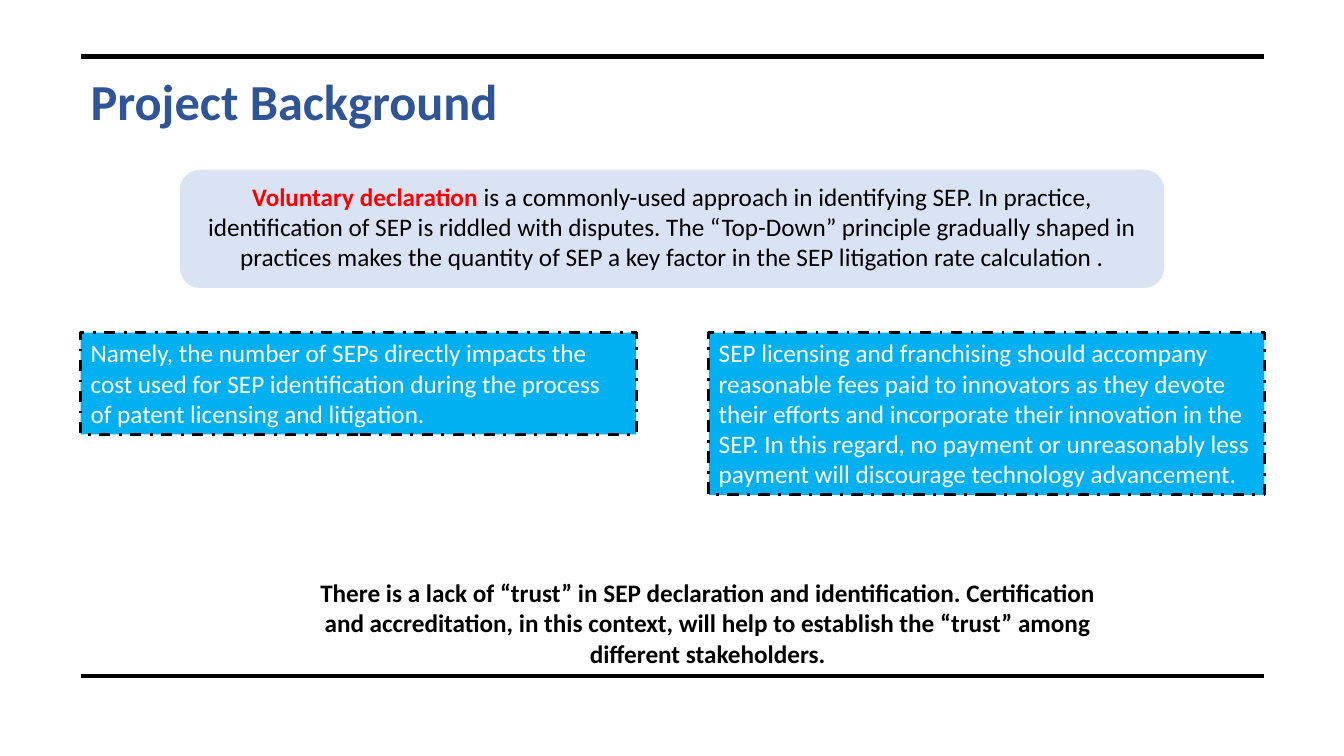
from pptx import Presentation
from pptx import util as u
from pptx.dml.color import RGBColor
from pptx.enum import dml, shapes, text
from pptx.oxml.ns import qn
from lxml import etree

LEFT, RIGHT = 0.8, 12.54
CARD_WIDTH, CARD_TOP = 5.51, 3.3


def color(value):
    return RGBColor.from_string(value)


class SlideBuilder:
    font = "Calibri"
    black, white, red = "000000", "FFFFFF", "FF0000"
    navy, pale, cyan = "2F5597", "DAE3F3", "00B0F0"

    def __init__(self, slide):
        self.slide = slide

    def rule(self, y):
        """Draw a heavy horizontal line across the content width."""
        line = self.slide.shapes.add_connector(
            shapes.MSO_CONNECTOR.STRAIGHT,
            u.Inches(LEFT), u.Inches(y), u.Inches(RIGHT), u.Inches(y))
        line.line.color.rgb = color(self.black)
        line.line.width = u.Pt(3)
        etree.SubElement(line._element.find(qn("p:spPr")), qn("a:effectLst"))

    def fill_text(self, box, spans, ink, size=18, bold=False, centred=False):
        """Fill a box with one paragraph; spans are (text, accent colour or None)."""
        frame = box.text_frame
        frame.word_wrap = True
        frame.vertical_anchor = text.MSO_ANCHOR.TOP
        para = frame.paragraphs[0]
        para.alignment = text.PP_ALIGN.CENTER if centred else text.PP_ALIGN.LEFT
        para.font.name = self.font
        para.font.size = u.Pt(size)
        para.font.bold = bold
        para.font.color.rgb = color(ink)
        for words, accent in spans:
            span = para.add_run()
            span.text = words
            if accent:
                span.font.bold = True
                span.font.color.rgb = color(accent)

    def label(self, place, words, ink, size=18, centred=False):
        box = self.slide.shapes.add_textbox(*map(u.Inches, place))
        self.fill_text(box, [(words, None)], ink, size, True, centred)

    def panel(self, kind, place, fill, outline, width, dash=None):
        box = self.slide.shapes.add_shape(kind, *map(u.Inches, place))
        box.shadow.inherit = False
        box.fill.solid()
        box.fill.fore_color.rgb = color(fill)
        box.line.color.rgb = color(outline)
        box.line.width = u.Pt(width)
        if dash:
            box.line.dash_style = dash
        return box

    def summary(self, place, spans):
        box = self.panel(shapes.MSO_SHAPE.ROUNDED_RECTANGLE, place,
                         self.pale, self.pale, 1)
        self.fill_text(box, spans, self.black, centred=True)

    def card(self, left, height, words):
        box = self.panel(shapes.MSO_SHAPE.RECTANGLE,
                         (left, CARD_TOP, CARD_WIDTH, height),
                         self.cyan, self.black, 2, dml.MSO_LINE.DASH_DOT)
        self.fill_text(box, [(words, None)], self.white)


def main():
    deck = Presentation()
    deck.slide_width, deck.slide_height = u.Inches(13.33), u.Inches(7.5)
    page = SlideBuilder(deck.slides.add_slide(deck.slide_layouts[6]))

    page.rule(0.56)
    page.label((LEFT, 0.65, 4.42, 0.71), "Project Background", page.navy, 36)
    page.summary((1.79, 1.69, 9.75, 1.16), [
        ("Voluntary declaration ", page.red),
        ("is a commonly-used approach in identifying SEP. In practice, "
         "identification of SEP is riddled with disputes. The “Top-Down” "
         "principle gradually shaped in practices makes the quantity of SEP "
         "a key factor in the SEP litigation rate calculation .", None),
    ])
    page.card(LEFT, 1.01,
              "Namely, the number of SEPs directly impacts the cost used for "
              "SEP identification during the process of patent licensing and "
              "litigation.")
    page.card(RIGHT - CARD_WIDTH, 1.61,
              "SEP licensing and franchising should accompany reasonable fees "
              "paid to innovators as they devote their efforts and incorporate "
              "their innovation in the SEP. In this regard, no payment or "
              "unreasonably less payment will discourage technology "
              "advancement.")
    page.label((2.94, 5.68, 8.16, 1.01),
               "There is a lack of “trust” in SEP declaration and "
               "identification. Certification and accreditation, in this "
               "context, will help to establish the “trust” among different "
               "stakeholders.", page.black, centred=True)
    page.rule(6.71)

    deck.save("out.pptx")


if __name__ == "__main__":
    main()
